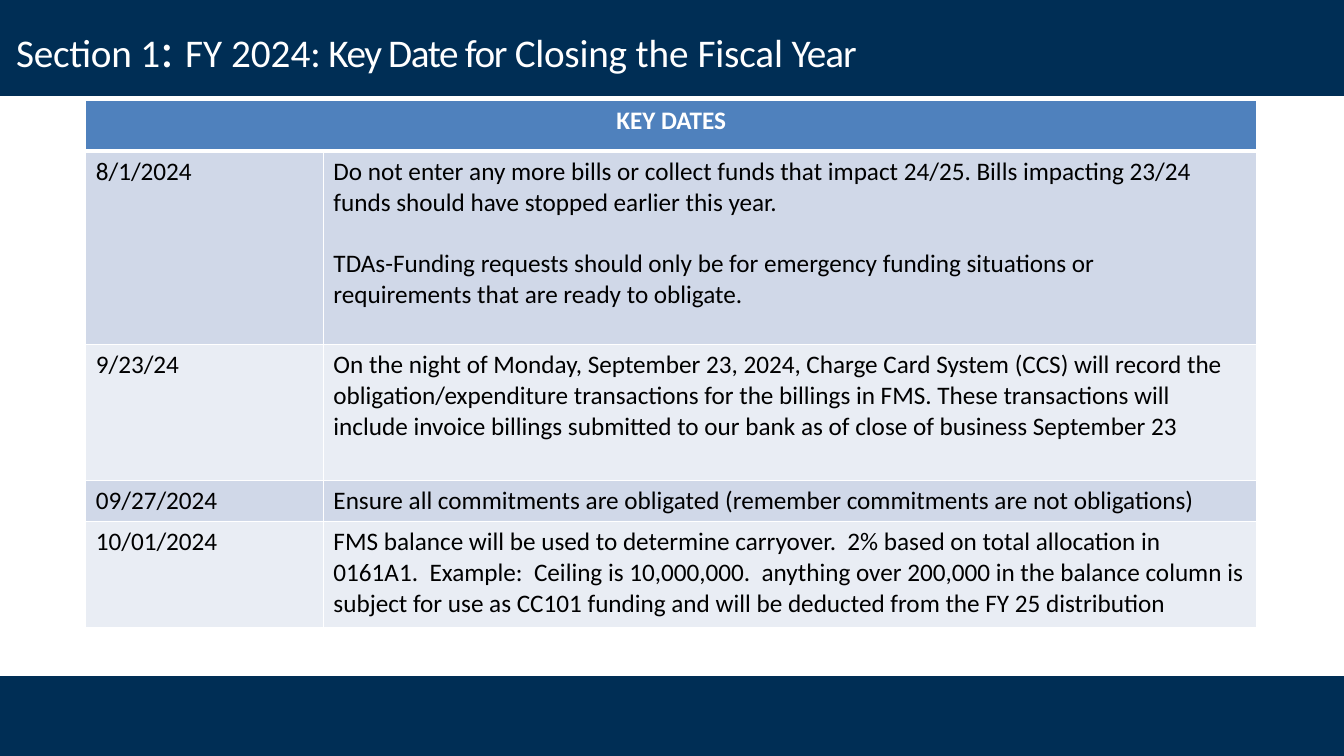
from dataclasses import dataclass

from lxml.etree import SubElement
from pptx import Presentation
from pptx.dml.color import RGBColor
from pptx.enum.shapes import MSO_SHAPE
from pptx.enum.text import PP_ALIGN
from pptx.oxml.ns import qn
from pptx.util import Cm, Pt


@dataclass(frozen=True)
class Theme:
    font: str = "Calibri"
    navy: RGBColor = RGBColor(0x00, 0x2E, 0x55)
    header: RGBColor = RGBColor(0x4F, 0x81, 0xBD)
    stripes: tuple = (RGBColor(0xD0, 0xD8, 0xE8), RGBColor(0xE9, 0xED, 0xF4))
    white: RGBColor = RGBColor(0xFF, 0xFF, 0xFF)
    black: RGBColor = RGBColor(0x00, 0x00, 0x00)
    title_size: Pt = Pt(28)
    colon_size: Pt = Pt(36)
    body_size: Pt = Pt(18)
    blank_line: Pt = Pt(22)
    thin: Pt = Pt(1)
    thick: Pt = Pt(3)


THEME = Theme()
SLIDE_WIDTH, SLIDE_HEIGHT = Cm(33.87), Cm(19.05)

# Title pieces: text, size, letter spacing in hundredths of a point
TITLE = [
    ("Section ", THEME.title_size, -20),
    ("1", THEME.title_size, 0),
    (": ", THEME.colon_size, 0),
    ("FY 2024", THEME.title_size, 0),
    (":", THEME.title_size, -20),
    (" Key Date for ", THEME.title_size, -100),
    ("Closing ", THEME.title_size, -20),
    ("the ", THEME.title_size, 0),
    ("Fiscal ", THEME.title_size, -10),
    ("Year", THEME.title_size, -70),
]

# Row height in cm, date, paragraphs with the space before each
KEY_DATES = [
    (4.88, "8/1/2024", [
        ("Do not enter any more bills or collect funds that impact 24/25. Bills impacting "
         "23/24 funds should have stopped earlier this year.", 0),
        ("TDAs-Funding requests should only be for emergency funding situations or ",
         THEME.blank_line),
        ("requirements that are ready to obligate.", 0)]),
    (3.42, "9/23/24", [
        ("On the night of Monday, September 23, 2024, Charge Card System (CCS) will record "
         "the obligation/expenditure transactions for the billings in FMS. These transactions "
         "will include invoice billings submitted to our bank as of close of business "
         "September 23", 0)]),
    (1.04, "09/27/2024", [
        ("Ensure all commitments are obligated (remember commitments are not obligations)", 0)]),
    (2.67, "10/01/2024", [
        ("FMS balance will be used to determine carryover.  2% based on total allocation in "
         "0161A1.  Example:  Ceiling is 10,000,000.  anything over 200,000 in the balance "
         "column is subject for use as CC101 funding and will be deducted from the FY 25 "
         "distribution", 0)]),
]


def add_band(slide, left, top, width, height):
    band = slide.shapes.add_shape(MSO_SHAPE.RECTANGLE, left, top, width, height)
    band.shadow.inherit = False
    band.fill.solid()
    band.fill.fore_color.rgb = THEME.navy
    band.line.fill.background()


def add_title(slide, left, top, width, height):
    frame = slide.shapes.add_textbox(left, top, width, height).text_frame
    frame.word_wrap = True
    frame.margin_left = frame.margin_top = frame.margin_right = frame.margin_bottom = 0
    heading = frame.paragraphs[0]
    heading.font.name = THEME.font
    heading.font.color.rgb = THEME.white
    for text, size, spacing in TITLE:
        piece = heading.add_run()
        piece.text = text
        piece.font.size = size
        piece.font.name = THEME.font
        piece.font.color.rgb = THEME.white
        piece.font._element.set("spc", str(spacing))


def style_cell(cell, fill, top, bottom):
    # Borders come before the fill in the cell properties
    properties = cell._tc.get_or_add_tcPr()
    edges = {"a:lnL": THEME.thin, "a:lnR": THEME.thin, "a:lnT": top, "a:lnB": bottom}
    for edge, weight in edges.items():
        border = SubElement(properties, qn(edge), w=str(int(weight)))
        paint = SubElement(border, qn("a:solidFill"))
        SubElement(paint, qn("a:srgbClr"), val=str(THEME.white))
    cell.fill.solid()
    cell.fill.fore_color.rgb = fill


def write_cell(cell, paragraphs, color, bold=False, align=PP_ALIGN.LEFT):
    frame = cell.text_frame
    for index, (text, space_before) in enumerate(paragraphs):
        paragraph = frame.add_paragraph() if index else frame.paragraphs[0]
        paragraph.text = text
        paragraph.alignment = align
        if space_before:
            paragraph.space_before = space_before
        paragraph.font.name = THEME.font
        paragraph.font.size = THEME.body_size
        paragraph.font.bold = bold
        paragraph.font.color.rgb = color


def add_key_dates(slide, left, top, width, height):
    dates = slide.shapes.add_table(len(KEY_DATES) + 1, 2, left, top, width, height).table
    dates.columns[0].width = Cm(5.99)
    dates.columns[1].width = width - Cm(5.99)

    # Header across both columns
    dates.rows[0].height = Cm(1.27)
    for cell in dates.rows[0].cells:
        style_cell(cell, THEME.header, THEME.thin, THEME.thick)
    dates.cell(0, 0).merge(dates.cell(0, 1))
    write_cell(dates.cell(0, 0), [("KEY DATES", 0)], THEME.white, True, PP_ALIGN.CENTER)

    # Striped date rows
    for number, (row_height, date, actions) in enumerate(KEY_DATES, 1):
        dates.rows[number].height = Cm(row_height)
        upper_edge = THEME.thick if number == 1 else THEME.thin
        stripe = THEME.stripes[(number - 1) % 2]
        for cell, content in zip(dates.rows[number].cells, ([(date, 0)], actions)):
            style_cell(cell, stripe, upper_edge, THEME.thin)
            write_cell(cell, content, THEME.black)


def build_key_dates_slide(deck):
    slide = deck.slides.add_slide(deck.slide_layouts[6])
    footer_height = Cm(2.01)
    add_band(slide, 0, 0, SLIDE_WIDTH, Cm(2.42))
    add_band(slide, 0, SLIDE_HEIGHT - footer_height, SLIDE_WIDTH, footer_height)
    add_title(slide, Cm(0.41), Cm(0.43), Cm(32.31), Cm(1.55))
    add_key_dates(slide, Cm(2.16), Cm(2.54), Cm(29.51), Cm(13.28))


def main():
    deck = Presentation()
    deck.slide_width, deck.slide_height = SLIDE_WIDTH, SLIDE_HEIGHT
    build_key_dates_slide(deck)
    deck.save("out.pptx")


if __name__ == "__main__":
    main()
